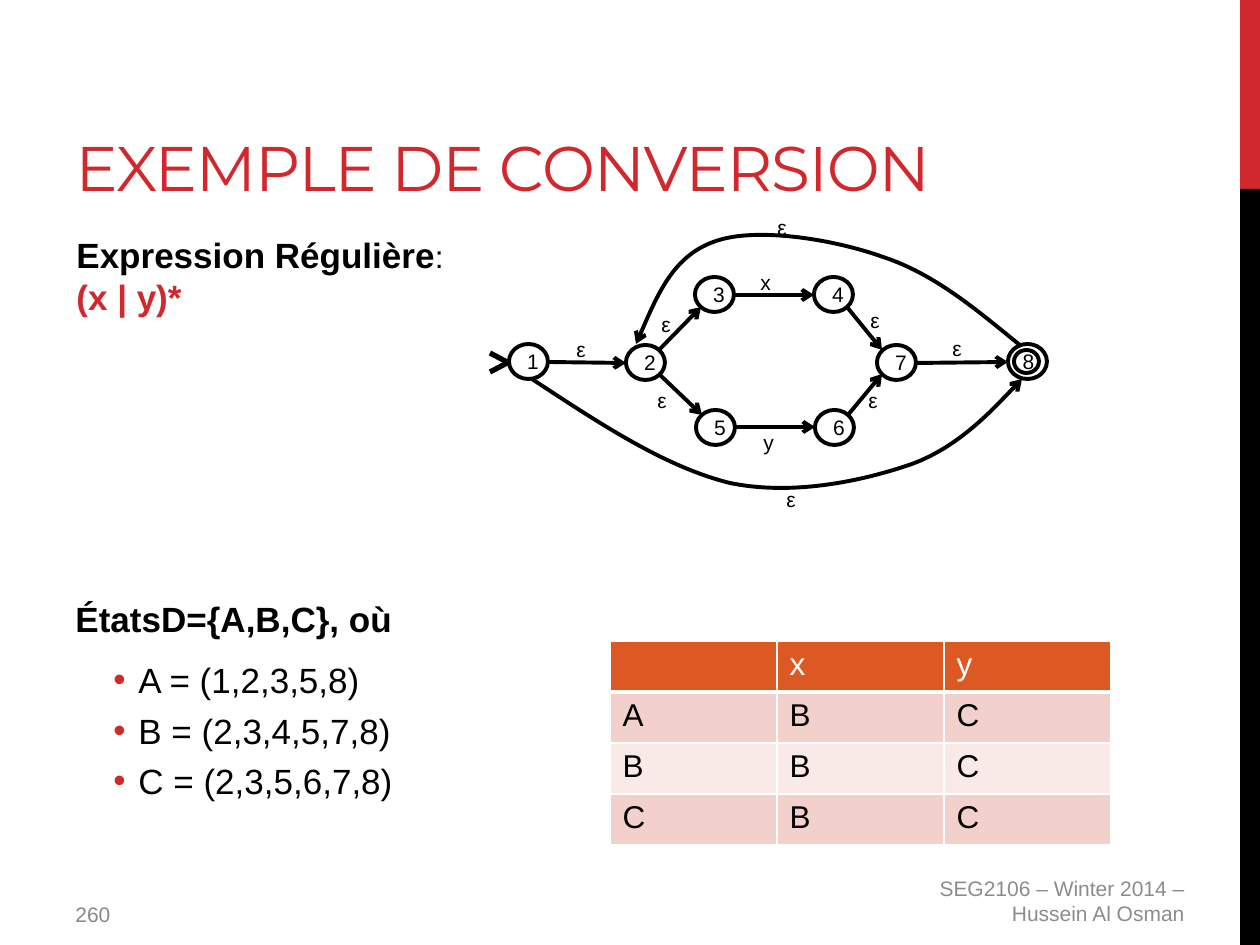
from dataclasses import dataclass

from lxml import etree
from pptx import Presentation
from pptx.dml.color import RGBColor
from pptx.enum.shapes import MSO_CONNECTOR, MSO_SHAPE
from pptx.enum.text import MSO_ANCHOR, MSO_AUTO_SIZE, PP_ALIGN
from pptx.oxml.ns import qn
from pptx.util import Pt

PX = 914400 / 126  # EMU in one px
STRAIGHT = MSO_CONNECTOR.STRAIGHT
OVAL, RECTANGLE = MSO_SHAPE.OVAL, MSO_SHAPE.RECTANGLE
LEFT, CENTER, RIGHT = PP_ALIGN.LEFT, PP_ALIGN.CENTER, PP_ALIGN.RIGHT
TOP, MIDDLE, BOTTOM = MSO_ANCHOR.TOP, MSO_ANCHOR.MIDDLE, MSO_ANCHOR.BOTTOM
NO_AUTOFIT = MSO_AUTO_SIZE.NONE


@dataclass(frozen=True)
class Theme:
    red: RGBColor = RGBColor(0xD1, 0x28, 0x2E)
    black: RGBColor = RGBColor(0, 0, 0)
    white: RGBColor = RGBColor(0xFF, 0xFF, 0xFF)
    footer: RGBColor = RGBColor(0x8C, 0x8C, 0x8C)
    number: RGBColor = RGBColor(0x89, 0x89, 0x89)
    header: RGBColor = RGBColor(0xDC, 0x59, 0x24)
    bands: tuple = (RGBColor(0xF2, 0xD1, 0xCD), RGBColor(0xF9, 0xEA, 0xE8))
    title_font: str = "Montserrat"
    font: str = "Arial"
    title_size: int = 36
    body_size: int = 20
    table_size: int = 18
    small_size: int = 12
    line: float = 2.25
    start_line: float = 3


THEME = Theme()


def write(frame, lines, size, color, align=LEFT, anchor=TOP, bold=False, font=THEME.font):
    """Fill a text frame with one paragraph per line."""
    frame.text = "\n".join(lines)
    frame.vertical_anchor = anchor
    for paragraph in frame.paragraphs:
        paragraph.alignment = align
        for run in paragraph.runs:
            run.font.name, run.font.size, run.font.bold = font, Pt(size), bold
            run.font.color.rgb = color


def stroke(shape, width=THEME.line, arrow=False):
    """Give a shape or connector a plain black line, with an arrowhead if asked."""
    shape.line.color.rgb = THEME.black
    shape.line.width = Pt(width)
    properties = shape.element.spPr
    if arrow:
        etree.SubElement(properties.find(qn("a:ln")), qn("a:tailEnd"), type="arrow")
    if properties.find(qn("a:effectLst")) is None:
        etree.SubElement(properties, qn("a:effectLst"))


prs = Presentation()
prs.slide_width, prs.slide_height = int(1260 * PX), int(945 * PX)
slide = prs.slides.add_slide(prs.slide_layouts[5])
shapes = slide.shapes

# Side bars
for y, h, color in [(0, 189, THEME.red), (189, 756, THEME.black)]:
    bar = shapes.add_shape(RECTANGLE, *(int(v * PX) for v in (1240, y, 20, h)))
    bar.shadow.inherit = False
    bar.fill.solid()
    bar.fill.fore_color.rgb = color
    bar.line.fill.background()

# Title
title = shapes.title
title.left, title.top, title.width, title.height = (int(v * PX) for v in (63, 21, 955, 189))
write(title.text_frame, ["EXEMPLE DE CONVERSION"], THEME.title_size, THEME.red,
      anchor=BOTTOM, font=THEME.title_font)
title.text_frame.word_wrap = True
title.text_frame.auto_size = NO_AUTOFIT
title.text_frame.paragraphs[0].runs[0].font._element.set("spc", "-60")

# Text blocks and edge labels
body, dark, small = THEME.body_size, THEME.black, THEME.small_size
blocks = [
    ((64, 227, 435, 97), ["Expression Régulière", "(x | y)*"], body, dark, LEFT, TOP, True),
    ((63, 591, 500, 253), ["ÉtatsD={A,B,C}, où", "A = (1,2,3,5,8)", "B = (2,3,4,5,7,8)",
                           "C = (2,3,5,6,7,8)"], body, dark, LEFT, TOP, False),
    ((903, 876, 294, 50), ["SEG2106 – Winter 2014 – Hussein Al Osman"],
     small, THEME.footer, RIGHT, MIDDLE, False),
    ((63, 895, 472, 39), ["260"], small, THEME.number, LEFT, TOP, False),
]
edge_labels = [
    ("ε", 940, 329), ("ε", 564, 330), ("ε", 765, 208), ("ε", 774, 480),
    ("x", 748, 263), ("y", 751, 423), ("ε", 649, 305), ("ε", 858, 301),
    ("ε", 645, 381), ("ε", 856, 381),
]
blocks += [((x, y, 47, 38), [label], small, dark, LEFT, TOP, False) for label, x, y in edge_labels]
frames = []
for box, lines, *style in blocks:
    frame = shapes.add_textbox(*(int(v * PX) for v in box)).text_frame
    frame.word_wrap = True
    write(frame, lines, *style)
    frames.append(frame)

# Regular expression: lighter colon, red formula
expression, states = frames[:2]
colon = expression.paragraphs[0].add_run()
colon.text = ":"
colon.font.name, colon.font.size, colon.font.bold = THEME.font, Pt(18), False
colon.font.color.rgb = THEME.black
expression.paragraphs[1].runs[0].font.color.rgb = THEME.red

# DFA states: bold heading, then bullets
heading, *bullets = states.paragraphs
heading.runs[0].font.bold = True
heading.space_after = Pt(6)
for bullet in bullets:
    bullet.level = 1
    bullet.space_before = Pt(5)
    properties = bullet._p.get_or_add_pPr()
    properties.set("marL", str(int(63 * PX)))
    properties.set("indent", str(int(-25 * PX)))
    bullet_color = etree.SubElement(properties, qn("a:buClr"))
    etree.SubElement(bullet_color, qn("a:srgbClr"), val=str(THEME.red))
    etree.SubElement(properties, qn("a:buFont"), typeface=THEME.font)
    etree.SubElement(properties, qn("a:buChar"), char="•")

# Automaton nodes: label, left, top, width, height, left inset
nodes = [(label, x, y, 39, 35, 9) for label, x, y in [
    ("1", 509, 344), ("2", 626, 345), ("3", 695, 277), ("4", 814, 277),
    ("5", 696, 410), ("6", 815, 410), ("7", 877, 345), ("", 1008, 344)]]
nodes.append(("8", 1014, 350, 25, 23, 4))
for label, x, y, w, h, inset in nodes:
    node = shapes.add_shape(OVAL, *(int(v * PX) for v in (x, y, w, h)))
    node.shadow.inherit = False
    node.fill.background()
    stroke(node)
    if label:
        frame = node.text_frame
        frame.word_wrap = False
        frame.margin_left = int(inset * PX)
        frame.margin_right = frame.margin_top = frame.margin_bottom = 0
        write(frame, [label], small, dark, CENTER, MIDDLE)

# Straight edges, then the two strokes of the start mark
edges = [
    (548, 362, 626, 363), (659, 350, 701, 307), (735, 295, 814, 295),
    (847, 307, 882, 350), (659, 374, 702, 415), (736, 427, 815, 427),
    (848, 415, 882, 374), (916, 363, 1008, 362),
]
start_mark = [(490, 353, 509, 363), (490, 372, 509, 362)]
for ends in edges + start_mark:
    edge = shapes.add_connector(STRAIGHT, *(int(v * PX) for v in ends))
    if ends in start_mark:
        stroke(edge, THEME.start_line)
    else:
        stroke(edge, arrow=True)

# Curved edges: a start point, then three points for each Bézier piece
skip_edge = [(532, 379), (599, 423), (665, 467), (730, 483), (793, 496), (863, 481),
             (912, 464), (961, 446), (1022, 379), (1022, 379)]
repeat_edge = [(1021, 346), (978, 311), (935, 274), (883, 257), (833, 239), (756, 227),
               (716, 241), (674, 255), (655, 300), (636, 344)]
for start, *points in (skip_edge, repeat_edge):
    builder = shapes.build_freeform(*start, scale=PX)
    builder.add_line_segments(points, close=False)
    curve = builder.convert_to_shape()
    curve.shadow.inherit = False
    curve.fill.background()
    stroke(curve, arrow=True)
    segments = curve.element.xpath(".//a:lnTo")
    for i in range(0, len(segments), 3):
        piece = etree.Element(qn("a:cubicBezTo"))
        segments[i].addprevious(piece)
        for segment in segments[i:i + 3]:
            piece.append(segment[0])
            segment.getparent().remove(segment)

# Transition table
transitions = [("", "x", "y"), ("A", "B", "C"), ("B", "B", "C"), ("C", "B", "C")]
table = shapes.add_table(4, 3, *(int(v * PX) for v in (610, 641, 501, 204))).table
for r, row in enumerate(transitions):
    table.rows[r].height = int(51 * PX)
    for c, value in enumerate(row):
        cell = table.cell(r, c)
        write(cell.text_frame, [value], THEME.table_size, THEME.black if r else THEME.white)
        properties = cell._tc.get_or_add_tcPr()
        for side in ("lnL", "lnR", "lnT", "lnB"):
            width = 3 if r == 0 and side == "lnB" else 1
            border = etree.SubElement(properties, qn(f"a:{side}"), w=str(Pt(width)))
            border_fill = etree.SubElement(border, qn("a:solidFill"))
            etree.SubElement(border_fill, qn("a:srgbClr"), val=str(THEME.white))
        cell.fill.solid()
        cell.fill.fore_color.rgb = THEME.bands[(r - 1) % 2] if r else THEME.header

prs.save("out.pptx")
